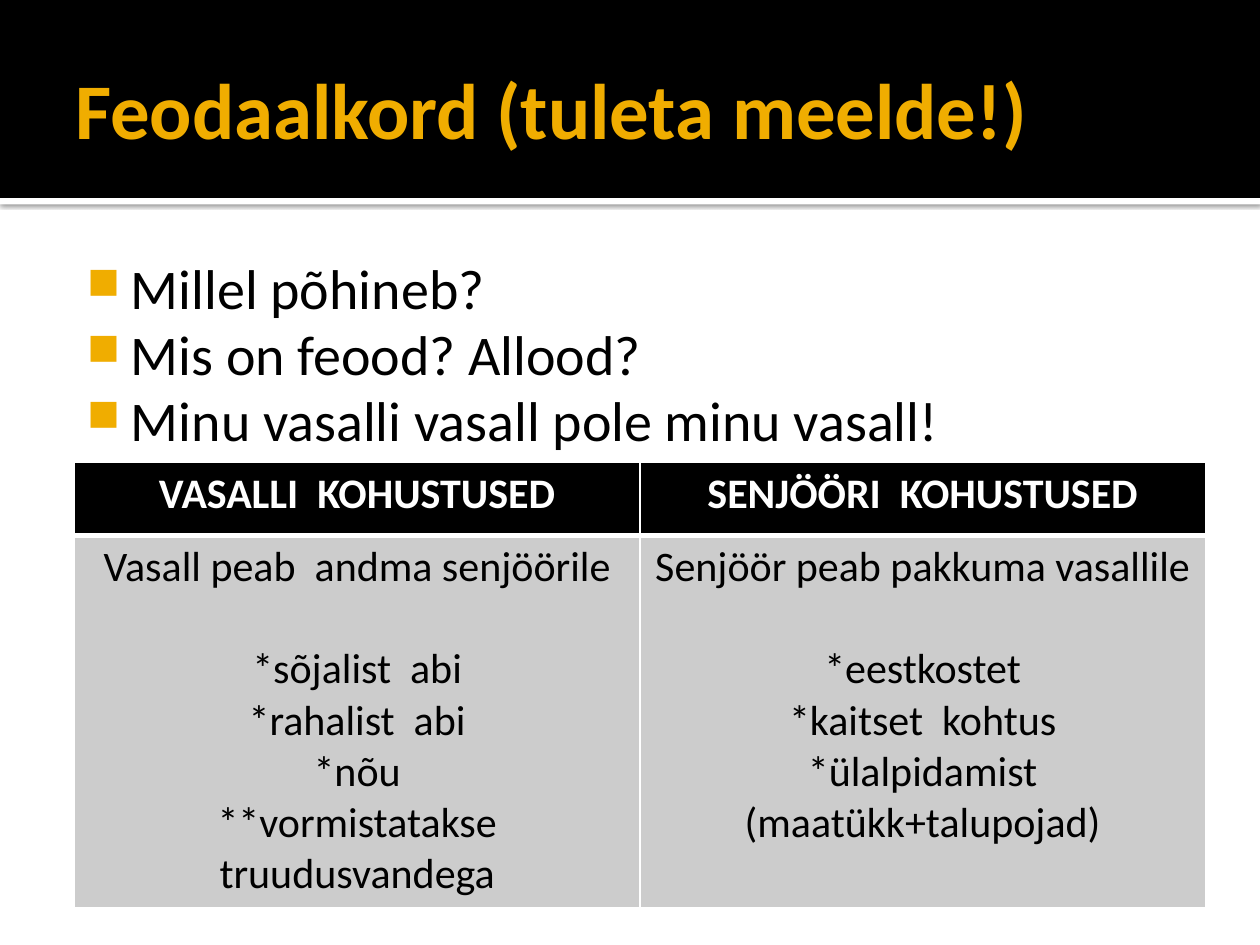
from dataclasses import dataclass

from lxml.etree import SubElement
from pptx import Presentation
from pptx.dml.color import RGBColor
from pptx.enum.shapes import MSO_SHAPE
from pptx.enum.text import MSO_ANCHOR, PP_ALIGN
from pptx.oxml.ns import qn
from pptx.util import Cm, Pt

BLACK, WHITE, GOLD, GREY = "000000", "FFFFFF", "F0AD00", "CCCCCC"


@dataclass
class Band:
    """Full-width strip at the top of the slide."""
    top: float
    height: float
    color: str
    shadow: bool = False


@dataclass
class TextStyle:
    """Character format of one kind of text."""
    size: float
    color: str
    bold: bool = False


@dataclass
class Duties:
    """Table column with a heading, an introduction and the duties."""
    heading: str
    intro: str
    items: list[str]


BANDS = [Band(3.99, 0.13, WHITE, shadow=True), Band(0, 3.99, BLACK)]
TITLE = TextStyle(45, GOLD, bold=True)
BULLET = TextStyle(32, BLACK)
HEADING = TextStyle(24, WHITE, bold=True)
DUTY = TextStyle(24, BLACK)
QUESTIONS = [
    "Millel põhineb?",
    "Mis on feood? Allood?",
    "Minu vasalli vasall pole minu vasall!",
]
COLUMNS = [
    Duties("VASALLI  KOHUSTUSED", "Vasall peab  andma senjöörile",
           ["*sõjalist  abi", "*rahalist  abi", "*nõu",
            "**vormistatakse truudusvandega"]),
    Duties("SENJÖÖRI  KOHUSTUSED", "Senjöör peab pakkuma vasallile",
           ["*eestkostet", "*kaitset  kohtus",
            "*ülalpidamist (maatükk+talupojad)"]),
]


def rgb(color: str) -> RGBColor:
    """Turn a hex string into a colour."""
    return RGBColor.from_string(color)


def add_color(parent, color: str):
    """Append an sRGB colour element."""
    return SubElement(parent, qn("a:srgbClr"), val=color)


def add_band(s, band: Band) -> None:
    """Draw one strip, with a soft shadow below it if wanted."""
    sp = s.shapes.add_shape(MSO_SHAPE.RECTANGLE, 0, Cm(band.top), Cm(25.4), Cm(band.height))
    sp.shadow.inherit = False
    sp.fill.solid()
    sp.fill.fore_color.rgb = rgb(band.color)
    sp.line.fill.background()
    if band.shadow:
        effects = sp._element.spPr.find(qn("a:effectLst"))
        shadow = SubElement(effects, qn("a:outerShdw"), blurRad=str(Pt(2.5)),
                            dist=str(Pt(0.8)), dir="5400000", rotWithShape="0")
        SubElement(add_color(shadow, BLACK), qn("a:alpha"), val="60000")


def add_textbox(s, top: float, height: float, **frame_format):
    """Add a wrapped text box and return its text frame."""
    tf = s.shapes.add_textbox(Cm(1.27), Cm(top), Cm(22.86), Cm(height)).text_frame
    for name, value in ({"word_wrap": True} | frame_format).items():
        setattr(tf, name, value)
    return tf


def write_lines(tf, lines: list[str], style: TextStyle, **paragraph_format) -> list:
    """Write one paragraph per line and return the paragraphs."""
    font = {"name": "Calibri", "size": Pt(style.size), "bold": style.bold}
    for i, line in enumerate(lines):
        p = tf.add_paragraph() if i else tf.paragraphs[0]
        r = p.add_run()
        r.text = line
        r.font.color.rgb = rgb(style.color)
        for target, values in ((r.font, font), (p, paragraph_format)):
            for name, value in values.items():
                setattr(target, name, value)
    return list(tf.paragraphs)


def add_bullet(p) -> None:
    """Give a paragraph a hanging gold square."""
    pPr = p._p.get_or_add_pPr()
    pPr.set("marL", str(Cm(1.22)))
    pPr.set("indent", str(Cm(-0.89)))
    add_color(SubElement(pPr, qn("a:buClr")), GOLD)
    SubElement(pPr, qn("a:buSzPct"), val="80000")
    SubElement(pPr, qn("a:buChar"), char="■")


def fill_cell(cell, lines: list[str], style: TextStyle, fill: str, bottom: float) -> list:
    """Fill a cell, border it in white and return its paragraphs."""
    tcPr = cell._tc.get_or_add_tcPr()
    for side, width in (("L", 1), ("R", 1), ("T", 1), ("B", bottom)):
        ln = SubElement(tcPr, qn(f"a:ln{side}"), w=str(Pt(width)))
        add_color(SubElement(ln, qn("a:solidFill")), WHITE)
    cell.fill.solid()
    cell.fill.fore_color.rgb = rgb(fill)
    return write_lines(cell.text_frame, lines, style, alignment=PP_ALIGN.CENTER)


def add_duties_table(s, columns: list[Duties]) -> None:
    """Draw the table of duties, one column per party."""
    table = s.shapes.add_table(2, len(columns), Cm(1.5), Cm(9.32), Cm(22.8), Cm(8.97)).table
    for row, height in zip(table.rows, (1.47, 7.5)):
        row.height = Cm(height)
    for i, column in enumerate(columns):
        fill_cell(table.cell(0, i), [column.heading], HEADING, BLACK, 3)
        paragraphs = fill_cell(table.cell(1, i), [column.intro, *column.items], DUTY, GREY, 1)
        paragraphs[1].space_before = Pt(29.3)


def main() -> None:
    """Build the slide and save it."""
    prs = Presentation()
    prs.slide_width, prs.slide_height = Cm(25.4), Cm(19.05)
    s = prs.slides.add_slide(prs.slide_layouts[6])
    for band in BANDS:
        add_band(s, band)
    title = add_textbox(s, 0.43, 3.48, vertical_anchor=MSO_ANCHOR.MIDDLE,
                        margin_left=Cm(0.25), margin_right=Cm(0.13))
    write_lines(title, ["Feodaalkord (tuleta meelde!)"], TITLE)
    body = add_textbox(s, 4.93, 12.85, margin_left=Cm(0.15), margin_top=Cm(0.25))
    for p in write_lines(body, QUESTIONS, BULLET, line_spacing=0.98):
        add_bullet(p)
    add_duties_table(s, COLUMNS)
    prs.save("out.pptx")


if __name__ == "__main__":
    main()
